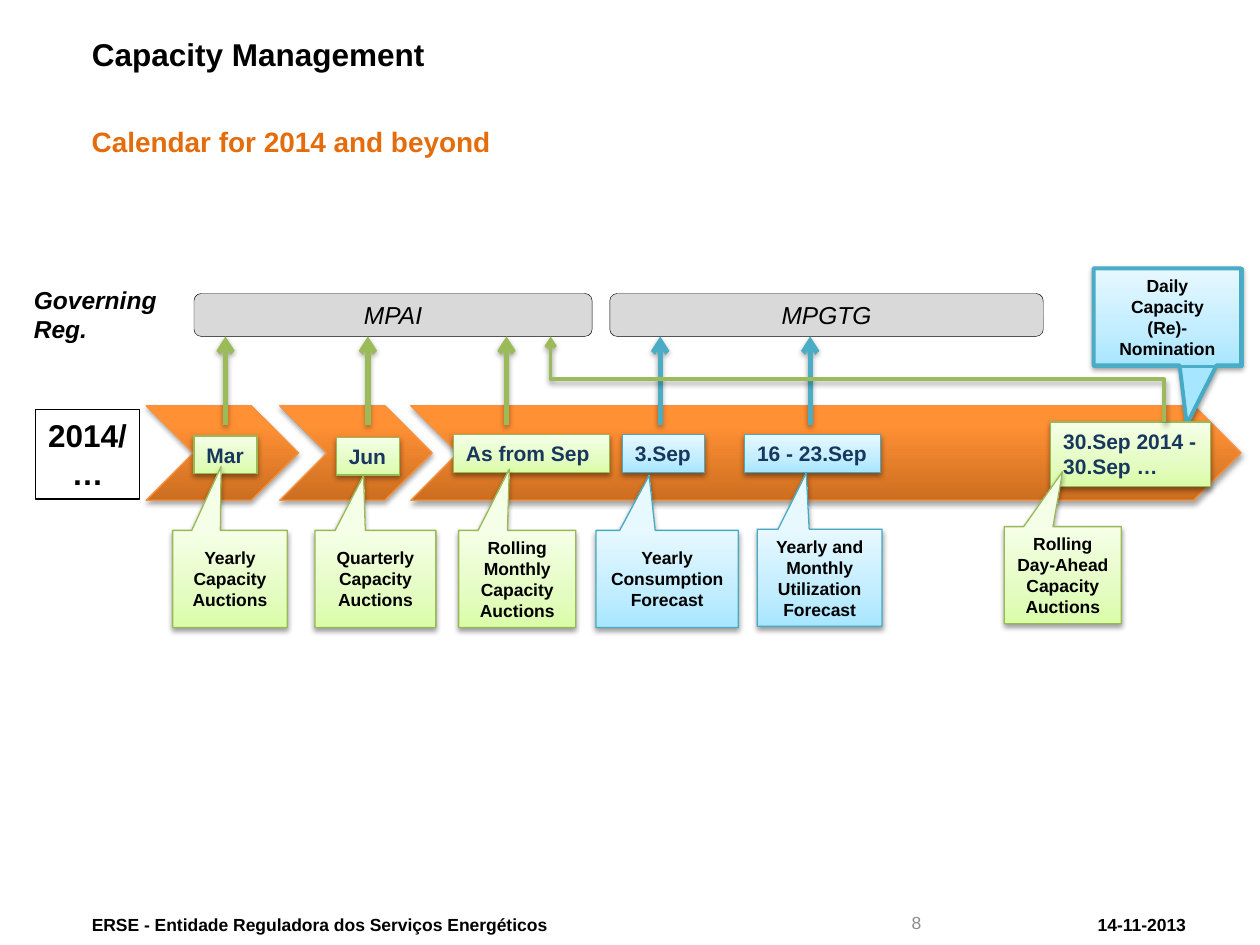
import pptx
import pptx.dml.color
import pptx.enum.shapes
import pptx.enum.text
import pptx.oxml.ns
import pptx.oxml.xmlchemy
import pptx.util
from lxml import etree
from pptx.util import Inches

SHAPE = pptx.enum.shapes.MSO_SHAPE
CONNECTOR = pptx.enum.shapes.MSO_CONNECTOR
ALIGN = pptx.enum.text.PP_ALIGN
ANCHOR = pptx.enum.text.MSO_ANCHOR
FIT = pptx.enum.text.MSO_AUTO_SIZE
qn = pptx.oxml.ns.qn

# Each look: gradient stops, outline colour and shadow strength in percent
ORANGE = ([(0, "CC6E20"), (80, "FF9034"), (100, "FF9136")], "F69240", 35)
GREEN = ([(0, "DAFDA7"), (35, "E4FCC2"), (100, "F5FFE7")], "98B955", 38)
BLUE = ([(0, "A7E6FF"), (35, "C1EDFF"), (100, "E7F8FF")], "46AAC5", 38)
GREEN_ARROW, BLUE_ARROW = "9BBB59", "4BACC6"
BAR_TOP, BAR_HEIGHT = 2.33, 0.34
BAR_BOTTOM = BAR_TOP + BAR_HEIGHT


def color(code):
    return pptx.dml.color.RGBColor.from_string(code)


def add_child(parent, tag, **attributes):
    child = etree.SubElement(parent, qn(tag))
    for name, value in attributes.items():
        child.set(name, str(value))
    return child


def add_shadow(effects, strength):
    shadow = add_child(effects, "a:outerShdw", blurRad=pptx.util.Pt(3.1),
                       dist=pptx.util.Pt(1.7), dir=5400000, rotWithShape=0)
    black = add_child(shadow, "a:srgbClr", val="000000")
    add_child(black, "a:alpha", val=strength * 1000)


def write(shape, lines, size, code="000000", bold=True, italic=False,
          align=ALIGN.LEFT, anchor=ANCHOR.TOP, wrap=True, grow=False):
    frame = shape.text_frame
    frame.word_wrap = wrap
    frame.auto_size = FIT.SHAPE_TO_FIT_TEXT if grow else FIT.NONE
    frame.vertical_anchor = anchor
    frame.text = lines
    for para in frame.paragraphs:
        para.alignment = align
        font = para.font
        font.name, font.size = "Arial", pptx.util.Pt(size)
        font.bold, font.italic = bold, italic
        font.color.rgb = color(code)


def add_text(page, place, lines, size, **style):
    box = page.shapes.add_textbox(*map(Inches, place))
    write(box, lines, size, **style)


def add_box(page, kind, place, line, width, fill=None):
    shape = page.shapes.add_shape(kind, *map(Inches, place))
    shape.shadow.inherit = False
    if fill:
        shape.fill.solid()
        shape.fill.fore_color.rgb = color(fill)
    else:
        shape.fill.background()
    shape.line.color.rgb = color(line)
    shape.line.width = pptx.util.Pt(width)
    return shape


def add_glossy(page, kind, place, look, width=0.75):
    stops, line, strength = look
    shape = add_box(page, kind, place, line, width)
    shape.fill.gradient()
    shape.fill.gradient_angle = 90
    properties = shape._element.spPr
    stop_list = properties.find(qn("a:gradFill")).find(qn("a:gsLst"))
    for stop in list(stop_list):
        stop_list.remove(stop)
    for position, code in stops:
        stop = add_child(stop_list, "a:gs", pos=position * 1000)
        add_child(stop, "a:srgbClr", val=code)
    add_shadow(properties.find(qn("a:effectLst")), strength)
    return shape


def add_date(page, place, lines, look):
    box = add_glossy(page, SHAPE.RECTANGLE, place, look)
    write(box, lines, 12, code="17375E", wrap=False, grow=True)


def add_callout(page, place, lines, look, tip, width=0.75):
    callout = add_glossy(page, SHAPE.RECTANGULAR_CALLOUT, place, look, width)
    callout.adjustments[0], callout.adjustments[1] = tip
    write(callout, lines, 10, align=ALIGN.CENTER, anchor=ANCHOR.MIDDLE)


def add_arrow(page, kind, start, end, code, width, strength):
    arrow = page.shapes.add_connector(kind, *map(Inches, start + end))
    arrow.line.color.rgb = color(code)
    arrow.line.width = pptx.util.Pt(width)
    properties = arrow._element.spPr
    add_child(properties.find(qn("a:ln")), "a:tailEnd", type="arrow")
    add_shadow(add_child(properties, "a:effectLst"), strength)
    return arrow


def add_upward_elbow(page, start, end, code):
    """Elbow that leaves and arrives vertically: a flipped one, turned by 270 degrees."""
    middle_x, middle_y = (start[0] + end[0]) / 2, (start[1] + end[1]) / 2
    half_width = (start[1] - end[1]) / 2
    half_height = (start[0] - end[0]) / 2
    elbow = add_arrow(page, CONNECTOR.ELBOW,
                      (middle_x - half_width, middle_y + half_height),
                      (middle_x + half_width, middle_y - half_height), code, 2, 38)
    elbow._element.spPr.find(qn("a:xfrm")).set("rot", "16200000")


def add_headings(page):
    title = page.shapes.title
    title.left, title.top, title.width, title.height = map(Inches, (0.63, 0.23, 6.93, 0.63))
    write(title, "Capacity Management", 18)
    add_text(page, (0.63, 0.94, 8.83, 0.31), "Calendar for 2014 and beyond", 16, code="E46C0A")


def add_footer(page):
    add_text(page, (8.56, 7.24, 0.95, 0.2), "14-11-2013", 10,
             align=ALIGN.RIGHT, anchor=ANCHOR.MIDDLE)
    add_text(page, (0.63, 7.24, 3.82, 0.2),
             "ERSE - Entidade Reguladora dos Serviços Energéticos", 10, anchor=ANCHOR.MIDDLE)
    add_text(page, (6.56, 7.22, 0.85, 0.2), "8", 10, code="8C8C8C", bold=False,
             align=ALIGN.RIGHT, anchor=ANCHOR.MIDDLE)


def add_regulations(page):
    add_text(page, (0.17, 2.21, 1.18, 0.57), "Governing\nReg.", 14,
             italic=True, wrap=False, grow=True)
    for left, width, name, label_width in ((1.54, 3.16, "MPAI", 0.67),
                                           (4.84, 3.44, "MPGTG", 0.92)):
        add_box(page, SHAPE.ROUNDED_RECTANGLE, (left, BAR_TOP, width, BAR_HEIGHT),
                "000000", 0.25, fill="D9D9D9")
        label_left = left + (width - label_width) / 2
        add_text(page, (label_left, BAR_TOP, label_width, BAR_HEIGHT), name, 14, bold=False,
                 italic=True, align=ALIGN.CENTER, wrap=False, grow=True)


def add_timeline(page):
    for left, width in ((1.16, 1.21), (2.22, 1.21), (3.26, 6.59)):
        add_glossy(page, SHAPE.CHEVRON, (left, 3.22, width, 0.75), ORANGE)
    year = add_box(page, SHAPE.RECTANGLE, (0.28, 3.25, 0.83, 0.71), "000000", 0.75)
    write(year, "2014/\n…", 18, align=ALIGN.CENTER, anchor=ANCHOR.MIDDLE,
          wrap=False, grow=True)


def add_events(page):
    # The nomination callout lies below the last date, inside a second frame
    add_callout(page, (8.68, 2.13, 1.17, 0.77), "Daily\nCapacity\n(Re)-Nomination",
                BLUE, (0.132, 1.108), width=2.25)
    add_box(page, SHAPE.RECTANGLE, (8.68, 2.13, 1.18, 0.78), BLUE_ARROW, 2)

    dates = (
        ((1.54, 3.46, 0.5, 0.3), "Mar", GREEN),
        ((2.67, 3.47, 0.5, 0.3), "Jun", GREEN),
        ((3.6, 3.45, 1.24, 0.3), "As from Sep", GREEN),
        ((4.94, 3.45, 0.65, 0.3), "3.Sep", BLUE),
        ((5.91, 3.45, 1.08, 0.3), "16 - 23.Sep", BLUE),
        ((8.34, 3.35, 1.27, 0.51), "30.Sep 2014 -\n30.Sep …", GREEN),
    )
    for place, lines, look in dates:
        add_date(page, place, lines, look)

    callouts = (
        (1.37, 4.21, 0.91, "Yearly Capacity Auctions", GREEN, (-0.077, -1.158)),
        (2.5, 4.21, 0.96, "Quarterly Capacity Auctions", GREEN, (-0.098, -1.066)),
        (3.64, 4.21, 0.93, "Rolling Monthly Capacity Auctions", GREEN, (-0.067, -1.131)),
        (4.73, 4.21, 1.13, "Yearly\nConsumption Forecast", BLUE, (-0.126, -1.066)),
        (6.01, 4.2, 0.99, "Yearly and Monthly Utilization\nForecast", BLUE, (-0.107, -1.079)),
        (7.97, 4.18, 0.93, "Rolling Day-Ahead Capacity Auctions", GREEN, (-0.002, -1.066)),
    )
    for left, top, width, lines, look, tip in callouts:
        add_callout(page, (left, top, width, 0.77), lines, look, tip)


def add_links(page):
    for x, code in ((1.79, GREEN_ARROW), (2.92, GREEN_ARROW), (4.02, GREEN_ARROW),
                    (5.24, BLUE_ARROW), (6.43, BLUE_ARROW)):
        add_arrow(page, CONNECTOR.STRAIGHT, (x, 3.37), (x, BAR_BOTTOM), code, 3, 35)
    add_upward_elbow(page, (9.24, 3.35), (4.37, BAR_BOTTOM), GREEN_ARROW)


def main():
    deck = pptx.Presentation()
    deck.slide_width, deck.slide_height = Inches(10), Inches(7.5)
    page = deck.slides.add_slide(deck.slide_layouts[5])
    add_headings(page)
    add_footer(page)
    add_regulations(page)
    add_timeline(page)
    add_events(page)
    add_links(page)
    deck.save("out.pptx")


if __name__ == "__main__":
    main()
